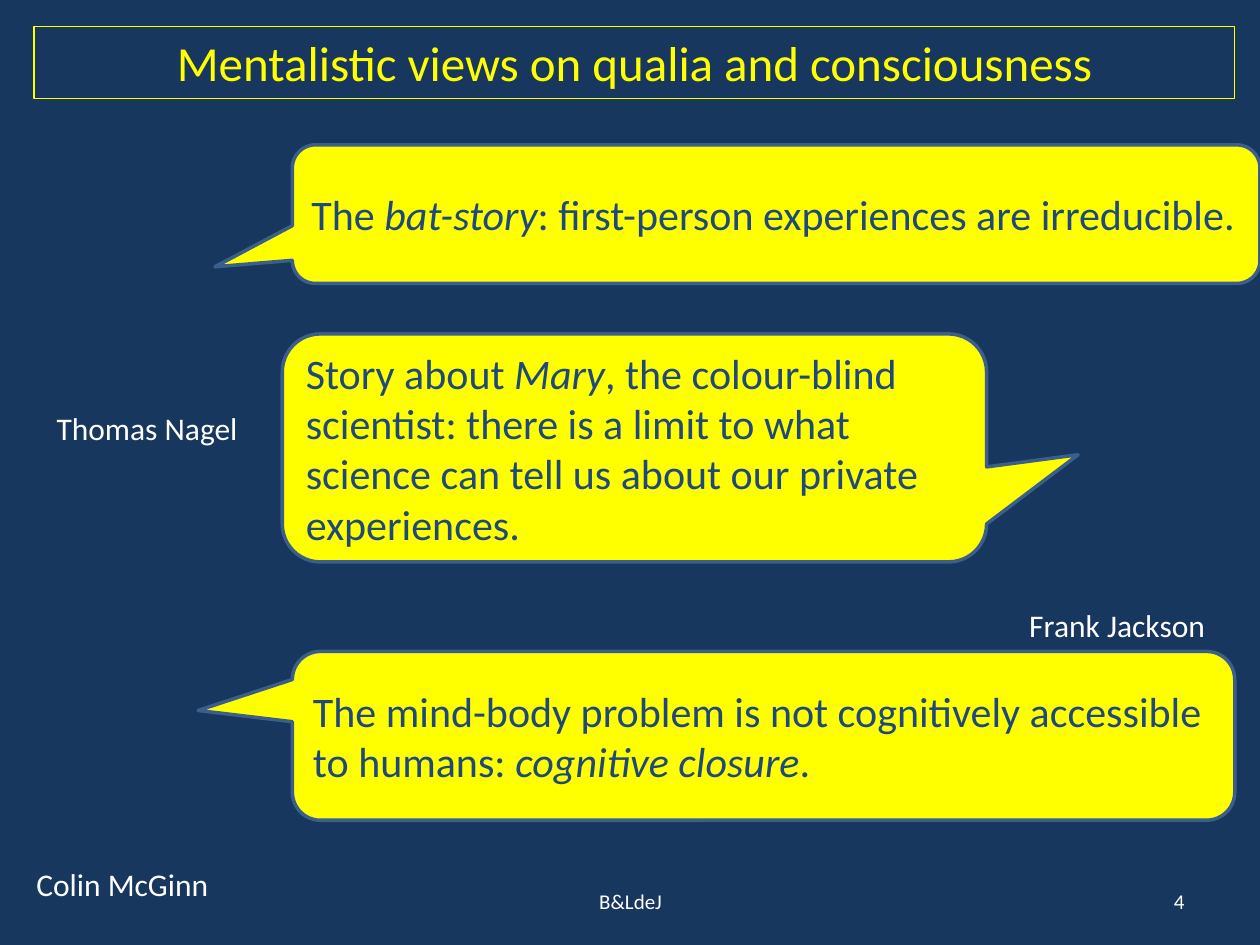
from dataclasses import dataclass

import pptx
import pptx.dml.color
import pptx.enum.shapes
import pptx.enum.text
import pptx.util

Inches = pptx.util.Inches
Pt = pptx.util.Pt
Align = pptx.enum.text.PP_ALIGN
Anchor = pptx.enum.text.MSO_ANCHOR
Fit = pptx.enum.text.MSO_AUTO_SIZE


@dataclass(frozen=True)
class Theme:
    font: str = "Calibri"
    navy: str = "17375E"
    yellow: str = "FFFF00"
    white: str = "FFFFFF"
    ink: str = "1F497D"
    edge: str = "3A5F8C"
    title: int = 28
    body: int = 24
    name: int = 18
    foot: int = 12


@dataclass(frozen=True)
class Box:
    left: float
    top: float
    width: float
    height: float

    def lengths(self) -> tuple:
        return tuple(Inches(v) for v in (self.left, self.top, self.width, self.height))


@dataclass(frozen=True)
class Bubble:
    box: Box
    tip: tuple  # pointer tip, as shares of the size from the centre
    before: str
    stress: str  # words in italics
    after: str


@dataclass(frozen=True)
class Label:
    box: Box
    text: str
    size: int
    align: Align = Align.LEFT
    anchor: Anchor = Anchor.TOP
    wrap: bool = False


THEME = Theme()

BUBBLES = [
    Bubble(Box(2.32, 1.15, 7.68, 1.1), (-0.58, 0.38),
           "The ", "bat-story", ": first-person experiences are irreducible."),
    Bubble(Box(2.24, 2.65, 5.59, 1.81), (0.63, 0.03),
           "Story about ", "Mary",
           ", the colour-blind scientist: there is a limit to what science "
           "can tell us about our private experiences."),
    Bubble(Box(2.32, 5.17, 7.48, 1.34), (-0.6, -0.15),
           "The mind-body problem is not cognitively accessible to humans: ",
           "cognitive closure", "."),
]

LABELS = [
    Label(Box(0.35, 3.2, 1.65, 0.4), "Thomas Nagel", THEME.name),
    Label(Box(8.07, 4.76, 1.61, 0.4), "Frank Jackson", THEME.name),
    Label(Box(0.19, 6.82, 1.58, 0.4), "Colin McGinn", THEME.name),
    Label(Box(3.42, 6.95, 3.17, 0.4), "B&LdeJ", THEME.foot,
          Align.CENTER, Anchor.MIDDLE, True),
    Label(Box(7.17, 6.95, 2.33, 0.4), "4", THEME.foot,
          Align.RIGHT, Anchor.MIDDLE, True),
]


def tint(code: str) -> pptx.dml.color.RGBColor:
    return pptx.dml.color.RGBColor.from_string(code)


def style(run, size: int, code: str, slant: bool = False) -> None:
    run.font.name = THEME.font
    run.font.size = Pt(size)
    run.font.italic = slant
    run.font.color.rgb = tint(code)


def outline(shape, code: str, width: float) -> None:
    shape.line.color.rgb = tint(code)
    shape.line.width = Pt(width)


def draw_title(slide, text: str, box: Box) -> None:
    title = slide.shapes.title
    title.left, title.top, title.width, title.height = box.lengths()
    outline(title, THEME.yellow, 0.75)
    frame = title.text_frame
    frame.text = text
    frame.word_wrap = True
    frame.auto_size = Fit.NONE
    frame.vertical_anchor = Anchor.TOP
    para = frame.paragraphs[0]
    para.alignment = Align.CENTER
    style(para.runs[0], THEME.title, THEME.yellow)


def draw_bubble(slide, bubble: Bubble) -> None:
    kind = pptx.enum.shapes.MSO_SHAPE.ROUNDED_RECTANGULAR_CALLOUT
    shape = slide.shapes.add_shape(kind, *bubble.box.lengths())
    shape.adjustments[0], shape.adjustments[1] = bubble.tip
    shape.shadow.inherit = False
    shape.fill.solid()
    shape.fill.fore_color.rgb = tint(THEME.yellow)
    outline(shape, THEME.edge, 2)
    frame = shape.text_frame
    frame.word_wrap = True
    frame.vertical_anchor = Anchor.MIDDLE
    para = frame.paragraphs[0]
    para.alignment = Align.LEFT
    for text in (bubble.before, bubble.stress, bubble.after):
        run = para.add_run()
        run.text = text
        style(run, THEME.body, THEME.ink, text == bubble.stress)


def draw_label(slide, label: Label) -> None:
    frame = slide.shapes.add_textbox(*label.box.lengths()).text_frame
    frame.text = label.text
    frame.word_wrap = label.wrap
    frame.vertical_anchor = label.anchor
    para = frame.paragraphs[0]
    para.alignment = label.align
    style(para.runs[0], label.size, THEME.white)


def main() -> None:
    deck = pptx.Presentation()
    deck.slide_width, deck.slide_height = Inches(10), Inches(7.5)
    slide = deck.slides.add_slide(deck.slide_layouts[5])  # title only

    # Background and title
    slide.background.fill.solid()
    slide.background.fill.fore_color.rgb = tint(THEME.navy)
    draw_title(slide, "Mentalistic views on qualia and consciousness",
               Box(0.27, 0.21, 9.53, 0.57))

    # Views, then the thinkers' names and the footer
    for bubble in BUBBLES:
        draw_bubble(slide, bubble)
    for label in LABELS:
        draw_label(slide, label)

    deck.save("out.pptx")


if __name__ == "__main__":
    main()
